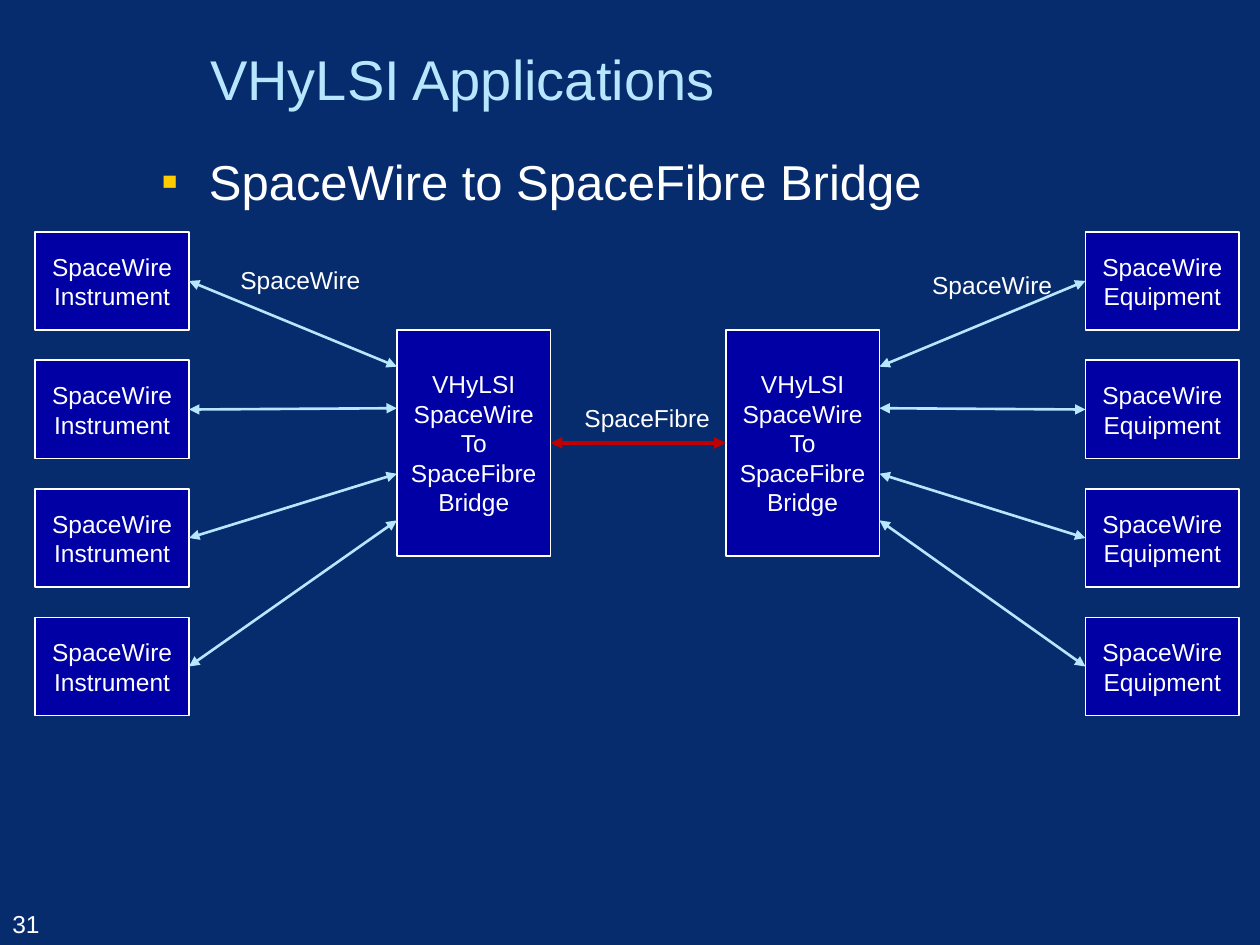
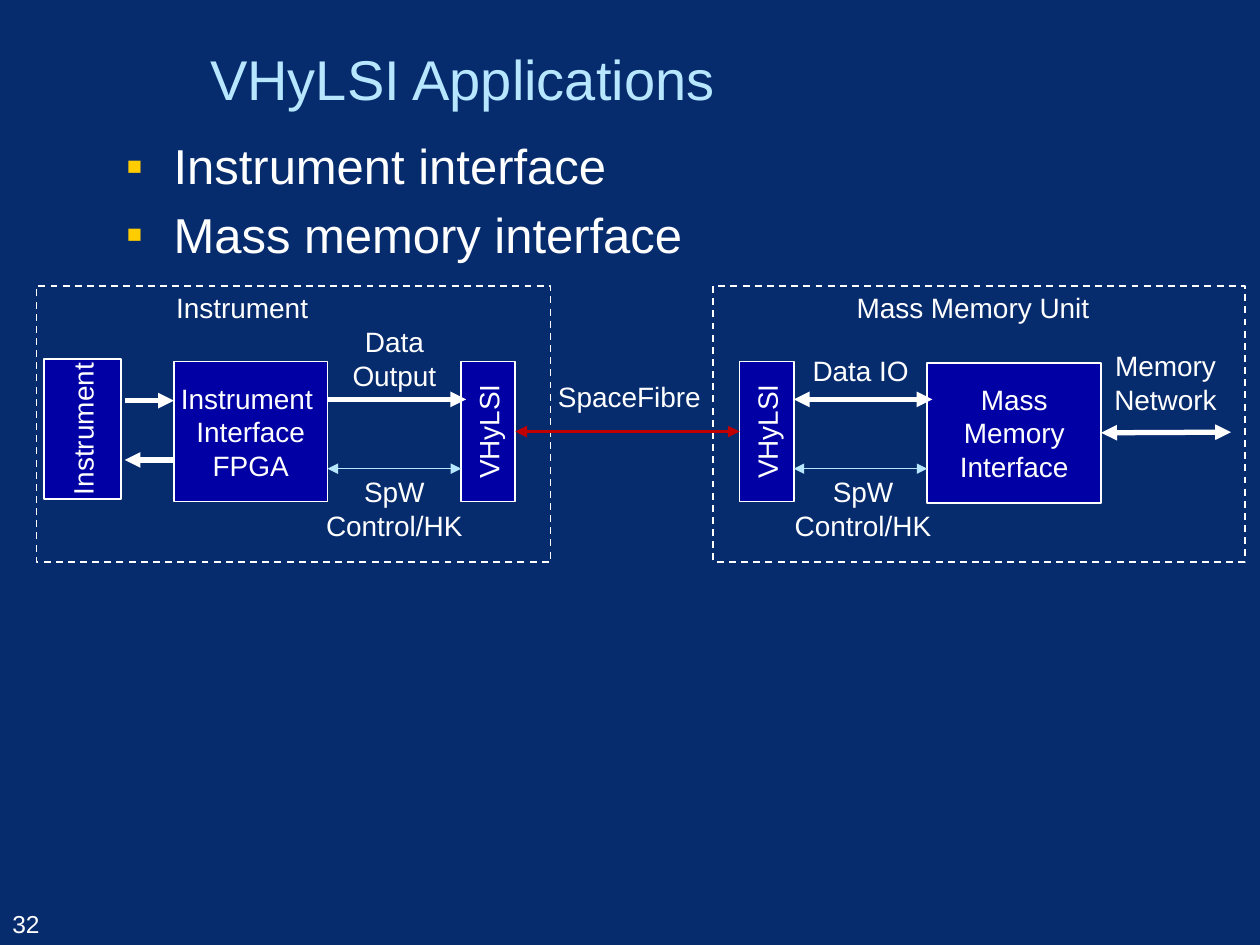
from lxml import etree
from pptx import Presentation
from pptx.dml.color import RGBColor
from pptx.enum.dml import MSO_LINE
from pptx.enum.shapes import MSO_CONNECTOR, MSO_SHAPE
from pptx.enum.text import MSO_ANCHOR, MSO_AUTO_SIZE, PP_ALIGN
from pptx.oxml.ns import qn
from pptx.util import Inches, Pt

NAVY = RGBColor(0x07, 0x2C, 0x6D)
BOX_BLUE = RGBColor(0x00, 0x00, 0xA4)
PALE_BLUE = RGBColor(0xB7, 0xE7, 0xFF)
WHITE = RGBColor(0xFF, 0xFF, 0xFF)
RED = RGBColor(0xC0, 0x00, 0x00)
BULLET_YELLOW = "FFCC00"

RECTANGLE = MSO_SHAPE.RECTANGLE
STRAIGHT = MSO_CONNECTOR.STRAIGHT
DASH = MSO_LINE.DASH
TOP, MIDDLE, BOTTOM = MSO_ANCHOR.TOP, MSO_ANCHOR.MIDDLE, MSO_ANCHOR.BOTTOM
LEFT, CENTER = PP_ALIGN.LEFT, PP_ALIGN.CENTER
FIT_TEXT = MSO_AUTO_SIZE.SHAPE_TO_FIT_TEXT
LEFT_SIDE, RIGHT_SIDE = 1, 3

# The slide is a grid of 100 columns by 75 rows of square cells
WIDTH, HEIGHT = Inches(10), Inches(7.5)
CELL = WIDTH // 100

TITLE_FONT = {"name": "Arial", "size": Pt(32), "color": PALE_BLUE}
BODY_FONT = {"name": "Arial", "size": Pt(28), "color": WHITE}
LABEL_FONT = {"name": "Arial", "size": Pt(16), "color": WHITE}
SMALL_FONT = {"name": "Arial", "size": Pt(14), "color": WHITE}

# Link styles: colour, width in points
WIRE = (PALE_BLUE, 1.5)
CONTROL = (PALE_BLUE, 0.75)
FIBRE = (RED, 2.25)
DATA = (WHITE, 3)

TITLE = "VHyLSI Applications"
CHIP = "VHyLSI"


def cells(*counts):
    return [round(count * CELL) for count in counts]


def apply_format(target, values):
    for name, value in values.items():
        if name == "color":
            target.color.rgb = value
        else:
            setattr(target, name, value)


def write_lines(shape, lines, font, align=LEFT, **frame_format):
    """Write one paragraph per line and return the paragraphs."""
    frame = shape.text_frame
    apply_format(frame, {"word_wrap": True, **frame_format})
    frame.text = "\n".join(lines)
    for paragraph in frame.paragraphs:
        paragraph.alignment = align
        apply_format(paragraph.font, font)
    return frame.paragraphs


def add_text(slide, area, lines, font, **options):
    shape = slide.shapes.add_textbox(*cells(*area))
    return write_lines(shape, lines, font, **options)


def add_label(slide, area, lines, font=LABEL_FONT, align=CENTER):
    add_text(slide, area, lines, font, align=align,
             word_wrap=False, auto_size=FIT_TEXT)


def add_bullets(slide, area, lines):
    for paragraph in add_text(slide, area, lines, BODY_FONT):
        properties = paragraph._p.get_or_add_pPr()
        properties.set("marL", str(Inches(0.38)))
        properties.set("indent", str(-Inches(0.38)))
        spacing = etree.SubElement(properties, qn("a:spcBef"))
        etree.SubElement(spacing, qn("a:spcPct"), val="20000")
        color = etree.SubElement(properties, qn("a:buClr"))
        etree.SubElement(color, qn("a:srgbClr"), val=BULLET_YELLOW)
        etree.SubElement(properties, qn("a:buFont"), typeface="Arial")
        etree.SubElement(properties, qn("a:buChar"), char="▪")


def add_rectangle(slide, area):
    shape = slide.shapes.add_shape(RECTANGLE, *cells(*area))
    shape.shadow.inherit = False
    apply_format(shape.line, {"color": WHITE, "width": Pt(1)})
    return shape


def add_box(slide, area, lines, font=LABEL_FONT, upright=False, **frame_format):
    shape = add_rectangle(slide, area)
    shape.fill.solid()
    shape.fill.fore_color.rgb = BOX_BLUE
    write_lines(shape, lines, font, align=CENTER,
                vertical_anchor=MIDDLE, **frame_format)
    if upright:
        shape.text_frame._txBody.bodyPr.set("vert", "vert270")
    return shape


def add_unit_frame(slide, area):
    shape = add_rectangle(slide, area)
    shape.fill.background()
    shape.line.dash_style = DASH


def side_middle(shape, side):
    x = shape.left + (shape.width if side == RIGHT_SIDE else 0)
    return x, shape.top + shape.height // 2


def add_link(slide, start, end, style, both_ways=True):
    """Each end is a (column, row) point or a (shape, side) pair."""
    joined = [not isinstance(stop[0], (int, float)) for stop in (start, end)]
    points = [side_middle(*stop) if is_joined else cells(*stop)
              for stop, is_joined in zip((start, end), joined)]
    connector = slide.shapes.add_connector(STRAIGHT, *points[0], *points[1])
    if joined[0]:
        connector.begin_connect(*start)
    if joined[1]:
        connector.end_connect(*end)
    color, width = style
    apply_format(connector.line, {"color": color, "width": Pt(width)})
    line = connector.line._get_or_add_ln()
    for tag in ("a:headEnd", "a:tailEnd") if both_ways else ("a:tailEnd",):
        etree.SubElement(line, qn(tag), type="triangle")
    etree.SubElement(connector._element.spPr, qn("a:effectLst"))


def add_base_slide(presentation, number):
    """Background, title and slide number shared by all slides."""
    slide = presentation.slides.add_slide(presentation.slide_layouts[6])
    slide.background.fill.solid()
    slide.background.fill.fore_color.rgb = NAVY
    add_text(slide, (15.7, 1.7, 84.3, 9), [TITLE], TITLE_FONT,
             vertical_anchor=MIDDLE)
    add_text(slide, (0, 69.8, 10.6, 5.2), [str(number)], SMALL_FONT,
             vertical_anchor=BOTTOM)
    return slide


def build_bridge_slide(presentation):
    slide = add_base_slide(presentation, 31)
    add_bullets(slide, (11.8, 11.5, 88.2, 63.5), ["SpaceWire to SpaceFibre Bridge"])

    box_width, box_height = 12.2, 7.8
    first_row, row_step = 18.4, 10.2
    port_rows = (29.1, 32.4, 37.6, 41.3)
    bridge_lines = [CHIP, "SpaceWire", "To", "SpaceFibre", "Bridge"]

    # Each half: device, device column, bridge column, device side, bridge side
    halves = (("Instrument", 2.8, 31.5, RIGHT_SIDE, LEFT_SIDE),
              ("Equipment", 86.15, 57.6, LEFT_SIDE, RIGHT_SIDE))
    bridges = []
    for device, column, bridge_column, device_side, bridge_side in halves:
        bridges.append(add_box(slide, (bridge_column, 26.2, box_width, 17.9),
                               bridge_lines, SMALL_FONT))
        port_column = bridge_column + (box_width if bridge_side == RIGHT_SIDE else 0)
        for index, port_row in enumerate(port_rows):
            row = first_row + index * row_step
            box = add_box(slide, (column, row, box_width, box_height),
                          ["SpaceWire", device], SMALL_FONT)
            add_link(slide, (box, device_side), (port_column, port_row), WIRE)

    # Link between the bridges, and link names
    add_link(slide, (bridges[0], RIGHT_SIDE), (bridges[1], LEFT_SIDE), FIBRE)
    for column, row, width, name in ((45.4, 31.5, 12.4, "SpaceFibre"),
                                     (18.1, 20.5, 12, "SpaceWire"),
                                     (73, 20.9, 12, "SpaceWire")):
        add_label(slide, (column, row, width, 3.5), [name], SMALL_FONT, LEFT)


def build_interface_slide(presentation):
    slide = add_base_slide(presentation, 32)
    add_bullets(slide, (9, 10.3, 91, 11),
                ["Instrument interface", "Mass memory interface"])

    box_row, box_height, chip_width = 28.7, 11.1, 4.3
    data_row, control_row = 31.7, 37.2

    # Unit frames with their names
    for column, width, name_column, name_width, name in (
            (2.9, 40.8, 13, 12.6, "Instrument"),
            (56.6, 42.2, 67, 20.7, "Mass Memory Unit")):
        add_unit_frame(slide, (column, 22.7, width, 21.9))
        add_label(slide, (name_column, 22.6, name_width, 3.7), [name], align=LEFT)

    # Boxes
    no_margins = dict.fromkeys(("margin_left", "margin_right"), 0)
    add_box(slide, (3.5, 28.5, 6.1, box_height), ["Instrument"], upright=True,
            margin_top=0, margin_bottom=0, **no_margins)
    add_box(slide, (13.8, box_row, 12.2, box_height),
            ["Instrument ", "Interface", "FPGA"], **no_margins)
    sender, receiver = [
        add_box(slide, (column, box_row, chip_width, box_height), [CHIP], upright=True)
        for column in (36.6, 58.7)]
    memory = add_box(slide, (73.6, 28.8, 13.8, box_height),
                     ["Mass Memory", "Interface"])

    # Links inside the instrument
    add_link(slide, (9.9, 31.8), (13.8, 31.8), DATA, both_ways=False)
    add_link(slide, (13.8, 36.5), (9.9, 36.5), DATA, both_ways=False)
    add_link(slide, (26, data_row), (37, data_row), DATA, both_ways=False)

    # Links between the units and in the memory unit
    add_link(slide, (sender, RIGHT_SIDE), (receiver, LEFT_SIDE), FIBRE)
    add_link(slide, (63, data_row), (74, data_row), DATA)
    add_link(slide, (memory, RIGHT_SIDE), (97.7, 34.3), DATA)

    # Control links, the same in both units
    for column, label_column in ((26, 24.8), (63, 62)):
        add_link(slide, (column, control_row), (column + 10.6, control_row), CONTROL)
        add_label(slide, (label_column, control_row, 13, 6.4), ["SpW", "Control/HK"])

    # Link names
    add_label(slide, (26.9, 25.3, 8.8, 6.4), ["Data", "Output"])
    add_label(slide, (43.3, 29.6, 13.5, 3.7), ["SpaceFibre"], align=LEFT)
    add_label(slide, (63.4, 27.6, 9.8, 3.7), ["Data IO"])
    add_label(slide, (87.4, 27.2, 10.2, 6.4), ["Memory", "Network"])


def main():
    presentation = Presentation()
    apply_format(presentation, {"slide_width": WIDTH, "slide_height": HEIGHT})
    build_bridge_slide(presentation)
    build_interface_slide(presentation)
    presentation.save("out.pptx")


if __name__ == "__main__":
    main()
